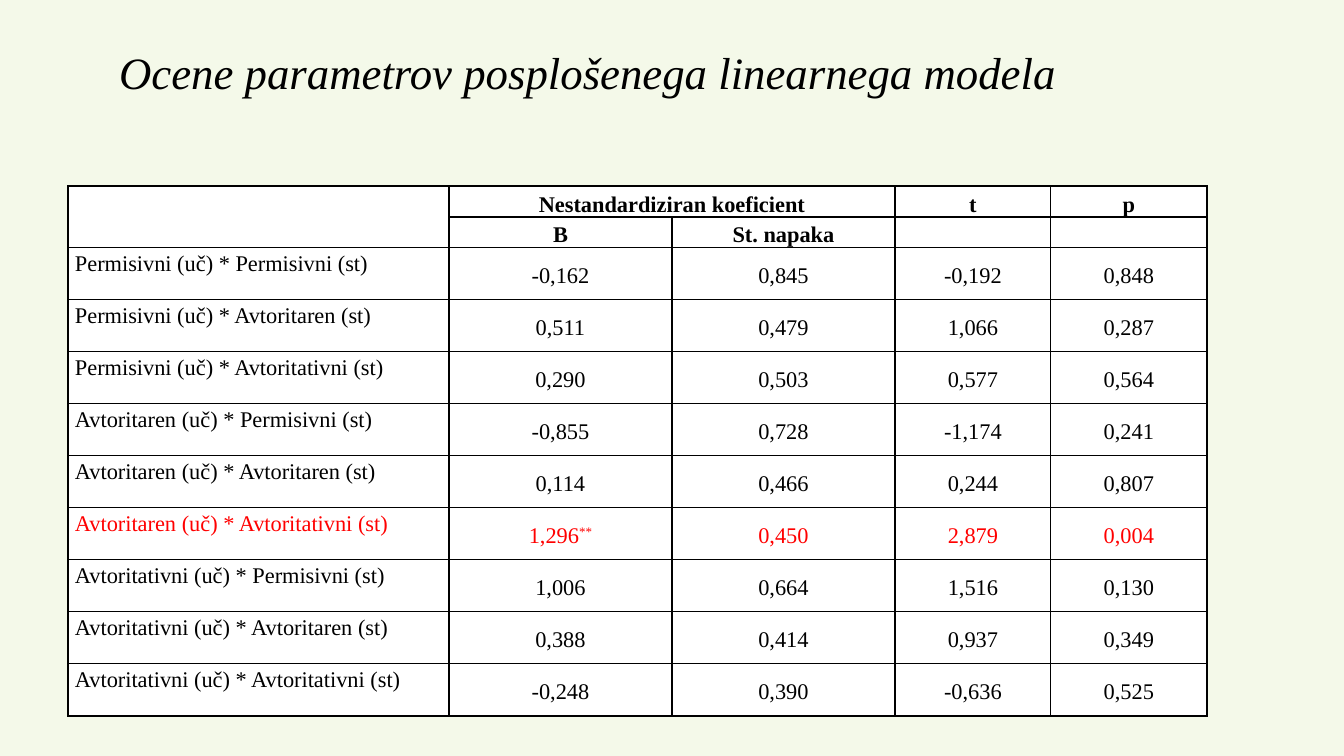
"""Builds a slide with a table of generalized linear model estimates."""
from dataclasses import dataclass

from lxml.etree import SubElement
from pptx import Presentation
from pptx.dml.color import RGBColor
from pptx.enum.text import MSO_ANCHOR as Anchor, MSO_AUTO_SIZE as AutoSize, PP_ALIGN as Align
from pptx.oxml.ns import qn
from pptx.util import Pt

TITLE = "Ocene parametrov posplošenega linearnega modela"
HEADERS = [
    ("", "Nestandardiziran koeficient", "", "t", "p"),
    ("", "B", "St. napaka", "", ""),
]
ESTIMATES = [
    ("Permisivni (uč) * Permisivni (st)", "-0,162", "0,845", "-0,192", "0,848"),
    ("Permisivni (uč) * Avtoritaren (st)", "0,511", "0,479", "1,066", "0,287"),
    ("Permisivni (uč) * Avtoritativni (st)", "0,290", "0,503", "0,577", "0,564"),
    ("Avtoritaren (uč) * Permisivni (st)", "-0,855", "0,728", "-1,174", "0,241"),
    ("Avtoritaren (uč) * Avtoritaren (st)", "0,114", "0,466", "0,244", "0,807"),
    ("Avtoritaren (uč) * Avtoritativni (st)", "1,296**", "0,450", "2,879", "0,004"),
    ("Avtoritativni (uč) * Permisivni (st)", "1,006", "0,664", "1,516", "0,130"),
    ("Avtoritativni (uč) * Avtoritaren (st)", "0,388", "0,414", "0,937", "0,349"),
    ("Avtoritativni (uč) * Avtoritativni (st)", "-0,248", "0,390", "-0,636", "0,525"),
]
MARK = "**"
ROWS = HEADERS + ESTIMATES

PX = 12192000 / 1344
SLIDE_SIZE = (1344, 756)
TITLE_BOX = (109, 40, 1098, 65)
TABLE_CORNER = (68, 186)
COLUMN_WIDTHS = (381, 223, 223, 156, 156)
ROW_HEIGHTS = [28] * len(HEADERS) + [52] * len(ESTIMATES)
CELL_INSET = 7


@dataclass(frozen=True)
class Theme:
    """Colours, font and sizes of the slide."""
    font: str = "Times New Roman"
    ink: str = "000000"
    significant: str = "FF0000"
    page: str = "F4F9E9"
    cell: str = "FFFFFF"
    title_size: int = 32
    table_size: int = 16
    line_spacing: float = 1.15
    inner_line: float = 1
    outer_line: float = 1.5


THEME = Theme()


def px(length):
    """Turn px into EMU."""
    return round(length * PX)


def style(span, size, color, bold=False, italic=False):
    """Format one run."""
    font = span.font
    font.name, font.size, font.bold, font.italic = THEME.font, Pt(size), bold, italic
    font.color.rgb = RGBColor.from_string(color)


def draw_borders(cell, row, column):
    """Line all four sides, heavier on the outside of the table."""
    outer_sides = {
        "a:lnL": column == 0,
        "a:lnR": column == len(COLUMN_WIDTHS) - 1,
        "a:lnT": row == 0,
        "a:lnB": row == len(ROWS) - 1,
    }
    properties = cell._tc.get_or_add_tcPr()
    for side, outer in outer_sides.items():
        width = THEME.outer_line if outer else THEME.inner_line
        line = SubElement(properties, qn(side), w=str(Pt(width)))
        SubElement(SubElement(line, qn("a:solidFill")), qn("a:srgbClr"), val=THEME.ink)


def write_cell(cell, text, row, column):
    """Put formatted text into one cell."""
    header = row < len(HEADERS)
    label = column == 0 and not header
    cell.margin_left = cell.margin_right = px(CELL_INSET)
    cell.margin_top = cell.margin_bottom = 0
    cell.vertical_anchor = Anchor.BOTTOM if header else Anchor.TOP if label else Anchor.MIDDLE
    para = cell.text_frame.paragraphs[0]
    para.alignment = Align.JUSTIFY if label else Align.CENTER
    para.line_spacing = THEME.line_spacing
    if not text:
        SubElement(para._p, qn("a:endParaRPr"), sz=str(THEME.table_size * 100))
        return
    significant = any(value.endswith(MARK) for value in ROWS[row])
    color = THEME.significant if significant else THEME.ink
    para.text = text.removesuffix(MARK)
    if text.endswith(MARK):
        para.add_run().text = MARK
    for span in para.runs:
        style(span, THEME.table_size, color, bold=header)
        if span.text == MARK:
            span.font._element.set("baseline", "30000")


def add_title(page):
    """Place and format the title."""
    title = page.shapes.title
    title.left, title.top, title.width, title.height = map(px, TITLE_BOX)
    frame = title.text_frame
    frame.text = TITLE
    frame.word_wrap = True
    frame.auto_size = AutoSize.SHAPE_TO_FIT_TEXT
    frame.vertical_anchor = Anchor.TOP
    para = frame.paragraphs[0]
    para.alignment = Align.LEFT
    style(para.runs[0], THEME.title_size, THEME.ink, italic=True)


def add_estimates(page):
    """Build the table of estimates."""
    size = (sum(COLUMN_WIDTHS), sum(ROW_HEIGHTS))
    table = page.shapes.add_table(
        len(ROWS), len(COLUMN_WIDTHS), *map(px, TABLE_CORNER + size)).table
    table.first_row = table.horz_banding = False
    for column, width in zip(table.columns, COLUMN_WIDTHS):
        column.width = px(width)
    for row, height in zip(table.rows, ROW_HEIGHTS):
        row.height = px(height)
    for row, values in enumerate(ROWS):
        for column, text in enumerate(values):
            cell = table.cell(row, column)
            draw_borders(cell, row, column)
            cell.fill.solid()
            cell.fill.fore_color.rgb = RGBColor.from_string(THEME.cell)
            write_cell(cell, text, row, column)
    table.cell(0, 0).merge(table.cell(1, 0))
    table.cell(0, 1).merge(table.cell(0, 2))


def main():
    """Build and save the deck."""
    deck = Presentation()
    deck.slide_width, deck.slide_height = map(px, SLIDE_SIZE)
    page = deck.slides.add_slide(deck.slide_layouts[5])
    page.background.fill.solid()
    page.background.fill.fore_color.rgb = RGBColor.from_string(THEME.page)
    add_title(page)
    add_estimates(page)
    deck.save("out.pptx")


if __name__ == "__main__":
    main()
